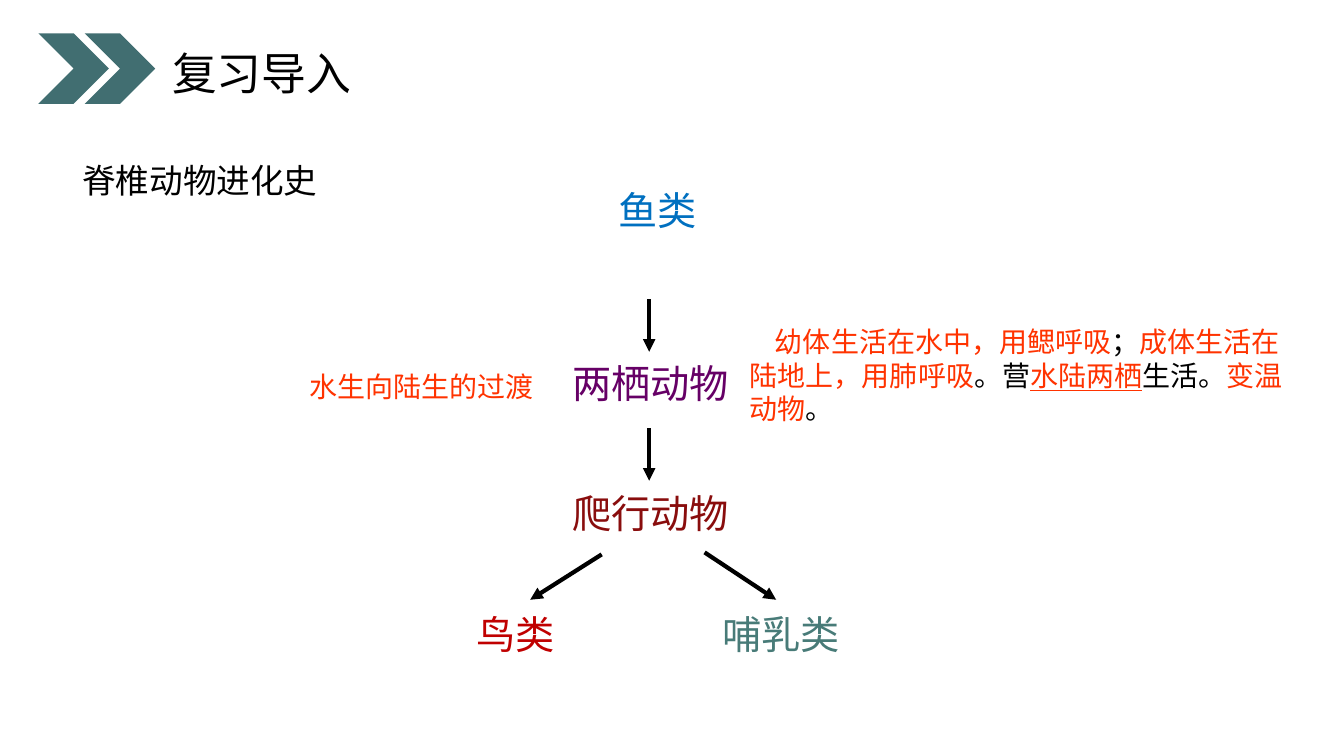
from lxml.etree import SubElement
from pptx import Presentation
from pptx.dml.color import RGBColor
from pptx.enum.shapes import MSO_CONNECTOR as Connector, MSO_SHAPE as Preset
from pptx.enum.text import MSO_AUTO_SIZE as AutoSize
from pptx.oxml.ns import qn
from pptx.util import Pt

BLACK = RGBColor(0x00, 0x00, 0x00)
TEAL = RGBColor(0x41, 0x6E, 0x71)
ORANGE = RGBColor(0xFF, 0x33, 0x00)
BLUE = RGBColor(0x00, 0x70, 0xC0)
PURPLE = RGBColor(0x66, 0x00, 0x66)
MAROON = RGBColor(0x89, 0x0D, 0x0D)
RED = RGBColor(0xC0, 0x00, 0x00)
SAGE = RGBColor(0x48, 0x7B, 0x78)

CHEVRON_LEFTS = (27.4, 60.5)
HEADINGS = (
    ("复习导入", 115.9, 28.8, 144, 46, 32),
    ("脊椎动物进化史", 51.8, 110.9, 184.3, 36, 24),
)
ANIMALS = (
    ("鱼类", 434.9, 129.6, 74.2, BLUE),
    ("两栖动物", 401.8, 253.4, 172, PURPLE),
    ("爬行动物", 401.8, 346.3, 172, MAROON),
    ("鸟类", 333.4, 432.7, 117.4, RED),
    ("哺乳类", 509, 432.7, 118, SAGE),
)
ARROWS = (
    (463.7, 213.8, 463.7, 251.3),
    (463.7, 306, 463.7, 343.4),
    (429.8, 396, 378.7, 428.4),
    (503.3, 394.6, 554.4, 428.4),
)
AMPHIBIAN_TRAITS = (
    ("幼体生活在水中，用鳃呼吸", ORANGE, False),
    ("；", BLACK, False),
    ("成体生活在陆地上，用肺呼吸", ORANGE, False),
    ("。营", BLACK, False),
    ("水陆两栖", ORANGE, True),
    ("生活。", BLACK, False),
    ("变温动物", ORANGE, False),
    ("。", BLACK, False),
)


def add_chevron(page, left):
    chevron = page.shapes.add_shape(Preset.CHEVRON, Pt(left), Pt(23.8), Pt(50.4), Pt(50.4))
    chevron.shadow.inherit = False
    chevron.fill.solid()
    chevron.fill.fore_color.rgb = TEAL
    chevron.line.fill.background()


def add_text(page, spans, left, top, width, height, size, wrap=True, indent=0):
    box = page.shapes.add_textbox(Pt(left), Pt(top), Pt(width), Pt(height))
    box.text_frame.word_wrap = wrap
    box.text_frame.auto_size = AutoSize.SHAPE_TO_FIT_TEXT
    para = box.text_frame.paragraphs[0]
    if indent:
        para._p.get_or_add_pPr().set("indent", str(Pt(indent)))
    for text, color, underline in spans:
        span = para.add_run()
        span.text = text
        formats = {"name": "Arial", "size": Pt(size), "underline": underline}
        for key, value in formats.items():
            setattr(span.font, key, value)
        span.font.color.rgb = color


def add_arrow(page, *ends):
    arrow = page.shapes.add_connector(Connector.STRAIGHT, *map(Pt, ends))
    arrow.line.color.rgb = BLACK
    arrow.line.width = Pt(3)
    SubElement(arrow.line._get_or_add_ln(), qn("a:tailEnd"), type="triangle")
    SubElement(arrow._element.spPr, qn("a:effectLst"))


def main():
    deck = Presentation()
    deck.slide_width, deck.slide_height = Pt(960), Pt(540)
    page = deck.slides.add_slide(deck.slide_layouts[6])
    for left in CHEVRON_LEFTS:
        add_chevron(page, left)
    for text, left, top, width, height, size in HEADINGS:
        add_text(page, [(text, BLACK, False)], left, top, width, height, size, wrap=False)
    for ends in ARROWS:
        add_arrow(page, *ends)
    for text, left, top, width, color in ANIMALS:
        add_text(page, [(text, color, False)], left, top, width, 41, 28)
    add_text(page, AMPHIBIAN_TRAITS, 528.5, 228.2, 412.6, 80, 20, indent=18)
    add_text(page, [("水生向陆生的过渡", ORANGE, False)], 213.8, 260.6, 249.8, 31.7, 20)
    deck.save("out.pptx")


if __name__ == "__main__":
    main()
